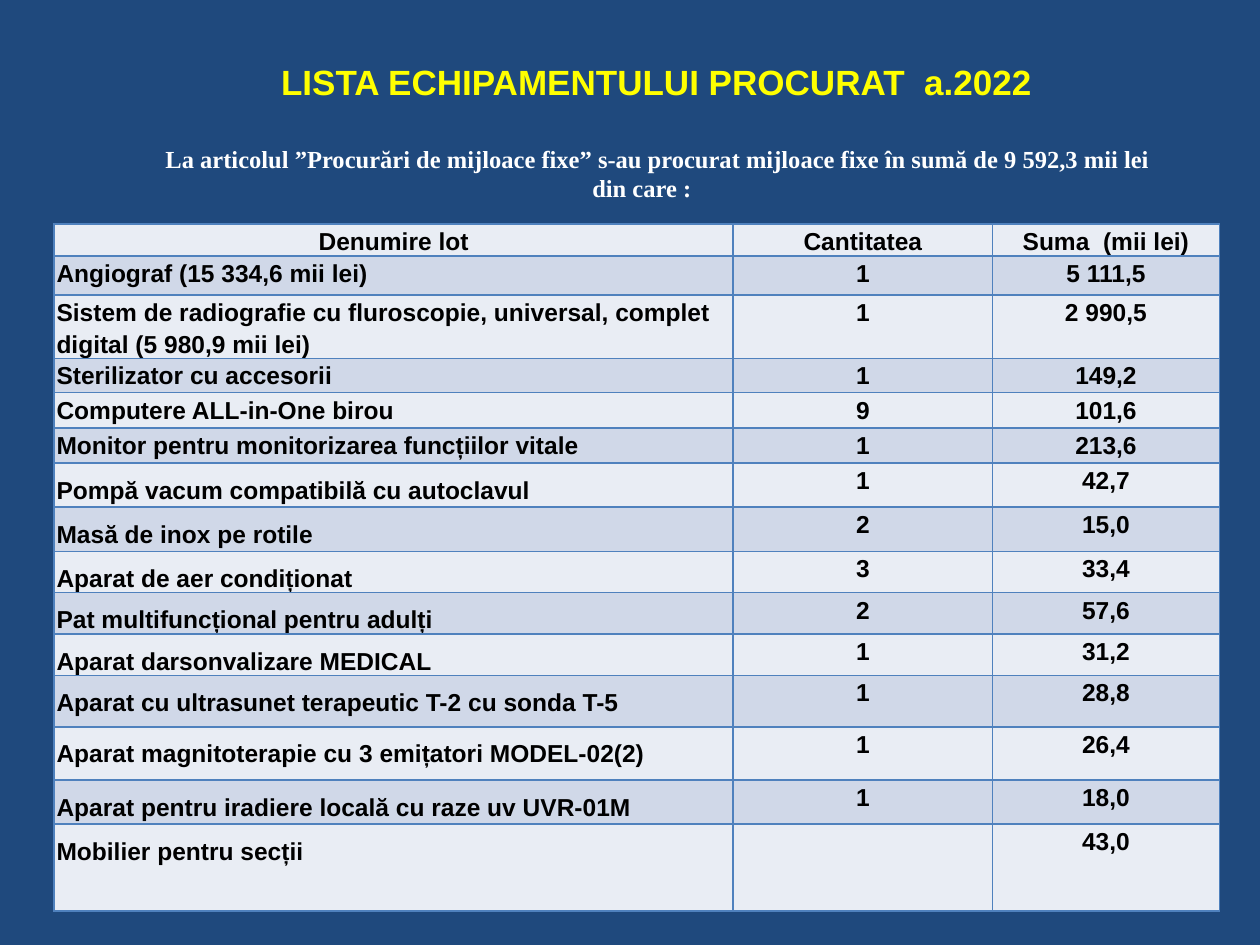
from pptx import Presentation
from pptx import util as u
from pptx.dml.color import RGBColor
from pptx.enum import text
from pptx.oxml import parse_xml

NAVY = RGBColor(0x1F, 0x49, 0x7D)
YELLOW = RGBColor(0xFF, 0xFF, 0x00)
WHITE = RGBColor(0xFF, 0xFF, 0xFF)
BLACK = RGBColor(0x00, 0x00, 0x00)
PALE = RGBColor(0xE9, 0xED, 0xF4)
BLUE_GREY = RGBColor(0xD0, 0xD8, 0xE8)
BORDER = RGBColor(0x4F, 0x81, 0xBD)
DRAWING = "http://schemas.openxmlformats.org/drawingml/2006/main"


def format_runs(paragraph, font_name, size, color):
    for run in paragraph.runs:
        run.font.name = font_name
        run.font.size = u.Pt(size)
        run.font.bold = True
        run.font.color.rgb = color


def add_borders(cell):
    properties = cell._tc.get_or_add_tcPr()
    for side in ("lnL", "lnR", "lnT", "lnB"):
        properties.append(parse_xml(
            f'<a:{side} xmlns:a="{DRAWING}" w="{u.Pt(1)}"><a:solidFill>'
            f'<a:srgbClr val="{BORDER}"/></a:solidFill></a:{side}>'))


deck = Presentation()
deck.slide_width, deck.slide_height = u.Cm(25.4), u.Cm(19.05)
slide = deck.slides.add_slide(deck.slide_layouts[5])
slide.background.fill.solid()
slide.background.fill.fore_color.rgb = NAVY

title = slide.shapes.title
title.left, title.top, title.width, title.height = u.Cm(5.21), u.Cm(0.53), u.Cm(16.05), u.Cm(2.21)
title.text_frame.text = "LISTA ECHIPAMENTULUI PROCURAT  a.2022"
title.text_frame.vertical_anchor = text.MSO_ANCHOR.MIDDLE
title.text_frame.paragraphs[0].alignment = text.PP_ALIGN.CENTER
format_runs(title.text_frame.paragraphs[0], "Arial", 20, YELLOW)

equipment = [
    ("Denumire lot", "Cantitatea", "Suma  (mii lei)", 0.58),
    ("Angiograf (15 334,6 mii lei)", "1", "5 111,5", 0.79),
    ("Sistem de radiografie cu fluroscopie, universal, complet digital (5 980,9 mii lei)",
     "1", "2 990,5", 1.24),
    ("Sterilizator cu accesorii", "1", "149,2", 0.69),
    ("Computere ALL-in-One birou", "9", "101,6", 0.71),
    ("Monitor pentru monitorizarea funcțiilor vitale", "1", "213,6", 0.71),
    ("Pompă vacum compatibilă cu autoclavul", "1", "42,7", 0.89),
    ("Masă de inox pe rotile", "2", "15,0", 0.89),
    ("Aparat de aer condiționat", "3", "33,4", 0.74),
    ("Pat multifuncțional pentru adulți", "2", "57,6", 0.74),
    ("Aparat darsonvalizare MEDICAL", "1", "31,2", 0.74),
    ("Aparat cu ultrasunet terapeutic T-2 cu sonda T-5", "1", "28,8", 1.04),
    ("Aparat magnitoterapie cu 3 emițatori MODEL-02(2)", "1", "26,4", 1.07),
    ("Aparat pentru iradiere locală cu raze uv UVR-01M", "1", "18,0", 0.89),
    ("Mobilier pentru secții", "", "43,0", 1.75),
]
FIRST_SPACED_ROW = 6

table = slide.shapes.add_table(
    len(equipment), 3, u.Cm(1.09), u.Cm(4.52), u.Cm(23.49), u.Cm(13.47)).table
table.first_row = False
table.horz_banding = False
for column, width in zip(table.columns, (13.69, 5.23, 4.57)):
    column.width = u.Cm(width)

for row_index, (*entries, height) in enumerate(equipment):
    table.rows[row_index].height = u.Cm(height)
    for column_index, entry in enumerate(entries):
        cell = table.cell(row_index, column_index)
        cell.margin_left = cell.margin_right = u.Cm(0.05)
        cell.margin_top = cell.margin_bottom = 0
        add_borders(cell)
        cell.fill.solid()
        cell.fill.fore_color.rgb = BLUE_GREY if row_index % 2 else PALE
        paragraph = cell.text_frame.paragraphs[0]
        paragraph.text = entry
        is_name = column_index == 0 and row_index > 0
        paragraph.alignment = text.PP_ALIGN.LEFT if is_name else text.PP_ALIGN.CENTER
        paragraph.line_spacing = 1.15
        if is_name and row_index >= FIRST_SPACED_ROW:
            paragraph.line_spacing = 1.5
            paragraph.space_after = u.Pt(6)
        format_runs(paragraph, "Arial", 14, BLACK)

summary = slide.shapes.add_textbox(u.Cm(2.16), u.Cm(2.34), u.Cm(21.56), u.Cm(1.9))
summary.text_frame.word_wrap = True
summary.text_frame.auto_size = text.MSO_AUTO_SIZE.SHAPE_TO_FIT_TEXT
summary.text_frame.margin_top = u.Cm(0.56)
sentence = summary.text_frame.paragraphs[0]
sentence.text = ("La articolul ”Procurări de mijloace fixe” s-au procurat mijloace fixe "
                 "în sumă de 9 592,3 mii lei din care :")
sentence.alignment = text.PP_ALIGN.CENTER
sentence._p.get_or_add_pPr().set("indent", str(u.Cm(0.65)))
format_runs(sentence, "Times New Roman", 14, WHITE)

deck.save("out.pptx")
